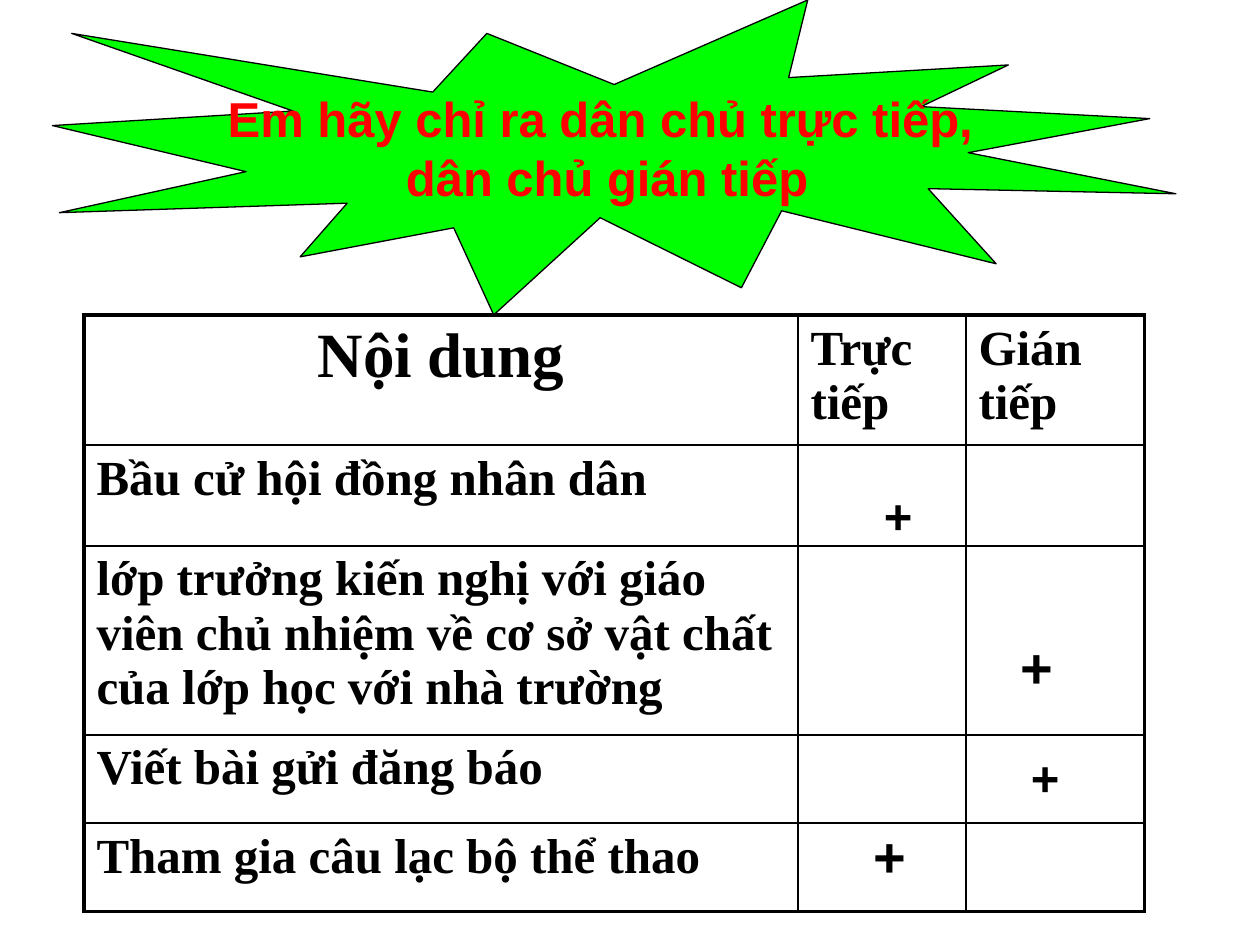
from lxml import etree
from pptx import Presentation
from pptx.dml.color import RGBColor
from pptx.enum.shapes import MSO_SHAPE
from pptx.enum.text import MSO_ANCHOR, PP_ALIGN
from pptx.oxml.ns import qn
from pptx.util import Pt

PX = 7620  # EMU, 120 px to the inch
BURST = MSO_SHAPE.EXPLOSION1
MIDDLE, BOTTOM = MSO_ANCHOR.MIDDLE, MSO_ANCHOR.BOTTOM
LEFT, CENTER = PP_ALIGN.LEFT, PP_ALIGN.CENTER

COLORS = {"burst": "00FF00", "question": "FF0000", "ink": "000000"}
SANS, SERIF = "Arial", "Times New Roman"
THIN, THICK = 1, 2.25


class SlideBuilder:
    def __init__(self, slide):
        self.slide = slide

    def color(self, name):
        return RGBColor.from_string(COLORS[name])

    def set_text(self, frame, lines, size, face, color="ink", align=LEFT):
        frame.text = "\n".join(lines)
        for paragraph in frame.paragraphs:
            paragraph.alignment = align
            font = paragraph.font
            font.size, font.name, font.bold = Pt(size), face, True
            font.color.rgb = self.color(color)

    def burst(self, box, lines):
        shape = self.slide.shapes.add_shape(BURST, *(v * PX for v in box))
        shape.shadow.inherit = False
        shape.fill.solid()
        shape.fill.fore_color.rgb = self.color("burst")
        shape.line.color.rgb = self.color("ink")
        shape.line.width = Pt(0.75)
        frame = shape.text_frame
        frame.word_wrap = False
        frame.vertical_anchor = MIDDLE
        self.set_text(frame, lines, 28, SANS, "question", CENTER)

    def mark(self, left, top, height, size):
        box = self.slide.shapes.add_textbox(left * PX, top * PX, 41 * PX, height * PX)
        frame = box.text_frame
        frame.word_wrap = True
        frame.vertical_anchor = BOTTOM
        self.set_text(frame, ["+"], size, SANS)

    def border(self, cell, side, width):
        line = etree.SubElement(cell._tc.get_or_add_tcPr(), qn(f"a:ln{side}"),
                                w=str(int(Pt(width))))
        fill = etree.SubElement(line, qn("a:solidFill"))
        etree.SubElement(fill, qn("a:srgbClr"), val=COLORS["ink"])

    def table(self, left, top, widths, heights, rows):
        table = self.slide.shapes.add_table(
            len(heights), len(widths), left * PX, top * PX,
            sum(widths) * PX, sum(heights) * PX).table
        table.first_row = table.horz_banding = False
        for column, width in zip(table.columns, widths):
            column.width = width * PX
        for row, height in zip(table.rows, heights):
            row.height = height * PX
        last_row, last_col = len(heights) - 1, len(widths) - 1
        for r, texts in enumerate(rows):
            for c, text in enumerate(texts):
                cell = table.cell(r, c)
                # Thick outer frame, thin inner rules
                outer = {"L": c == 0, "R": c == last_col,
                         "T": r == 0, "B": r == last_row}
                for side, is_outer in outer.items():
                    self.border(cell, side, THICK if is_outer else THIN)
                cell.fill.background()
                if text:
                    heading = r == 0 and c == 0
                    self.set_text(cell.text_frame, [text], 36 if heading else 28,
                                  SERIF, align=CENTER if heading else LEFT)


def main():
    deck = Presentation()
    deck.slide_width, deck.slide_height = 1200 * PX, 900 * PX
    builder = SlideBuilder(deck.slides.add_slide(deck.slide_layouts[6]))

    # Question
    builder.burst((50, 0, 1070, 300),
                  ["Em hãy chỉ ra dân chủ trực tiếp, ", "dân chủ gián tiếp"])

    # Forms of democracy
    activities = [
        "Bầu cử hội đồng nhân dân",
        "lớp trưởng kiến nghị với giáo viên chủ nhiệm về cơ sở vật chất "
        "của lớp học với nhà trường",
        "Viết bài gửi đăng báo",
        "Tham gia câu lạc bộ thể thao",
    ]
    rows = [("Nội dung", "Trực tiếp", "Gián tiếp")]
    rows += [(activity, "", "") for activity in activities]
    builder.table(80, 300, [680, 160, 170], [124, 96, 180, 84, 84], rows)

    # Answers: left, top, height, font size
    for answer in [(830, 420, 104, 28), (960, 560, 112, 32),
                   (820, 740, 112, 32), (970, 670, 104, 28)]:
        builder.mark(*answer)

    deck.save("out.pptx")


if __name__ == "__main__":
    main()
